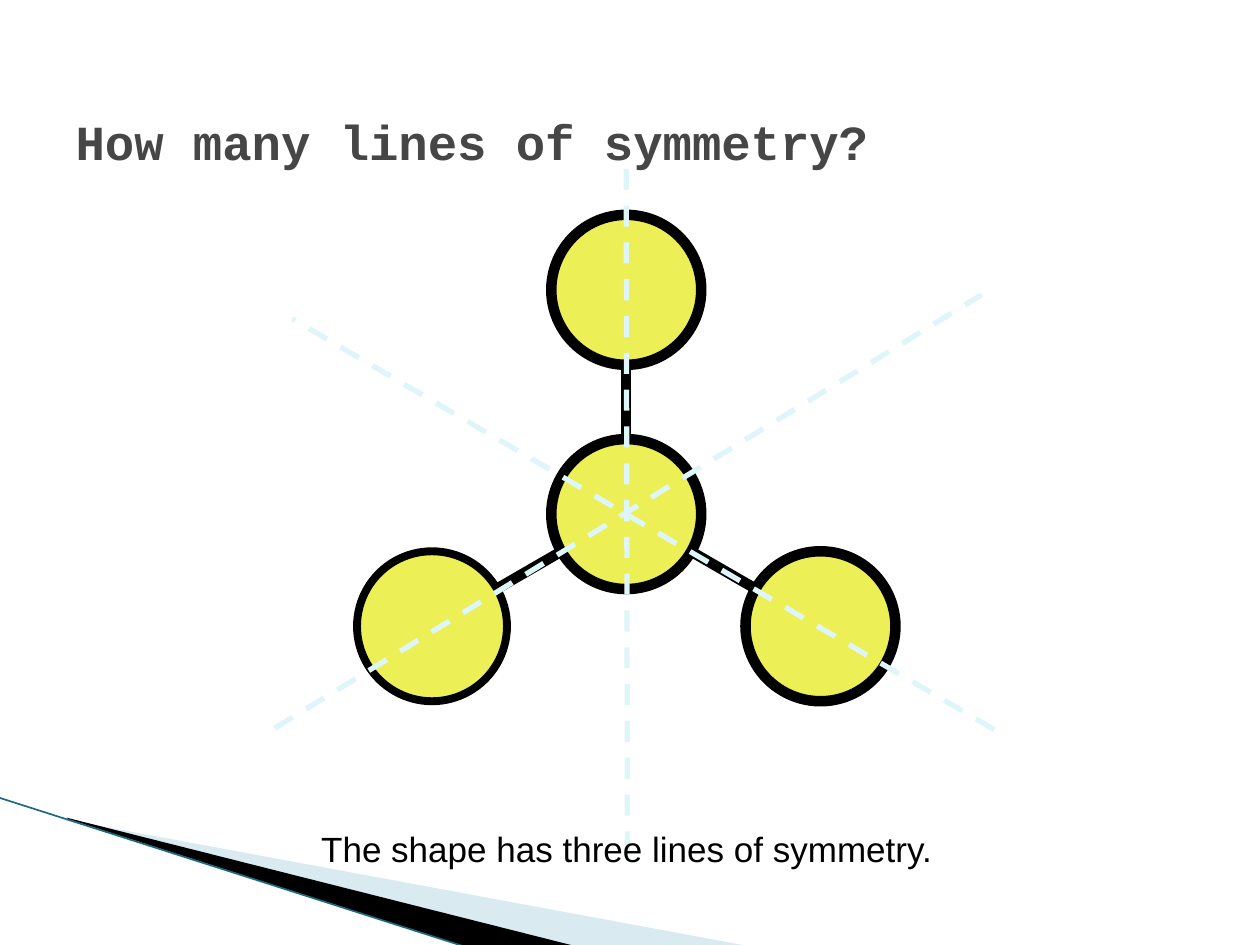
import math

from lxml import etree
from pptx import Presentation
from pptx.dml.color import RGBColor
from pptx.enum.dml import MSO_LINE
from pptx.enum.shapes import MSO_CONNECTOR, MSO_SHAPE
from pptx.enum.text import MSO_ANCHOR, PP_ALIGN
from pptx.oxml.ns import qn
from pptx.util import Inches, Pt

STRAIGHT = MSO_CONNECTOR.STRAIGHT
OVAL = MSO_SHAPE.OVAL
DASH = MSO_LINE.DASH
MIDDLE = MSO_ANCHOR.MIDDLE
LEFT, CENTER = PP_ALIGN.LEFT, PP_ALIGN.CENTER

COLORS = {
    "title": "464646",
    "black": "000000",
    "disc": "ECF056",
    "symmetry": "DEF5FA",
    "wedge": "A0CBDC",
    "edge": "1B6A7D",
}


def rgb(name):
    return RGBColor.from_string(COLORS[name])


class SlideBuilder:
    """Holds the style and the current slide."""

    def __init__(self, slide):
        self.slide = slide

    def add_text(self, frame, text, align, color, **font_values):
        para = frame.paragraphs[0]
        para.alignment = align
        span = para.add_run()
        span.text = text
        for name, value in font_values.items():
            setattr(span.font, name, value)
        span.font.color.rgb = rgb(color)

    def title(self, text, left, top, width, height):
        box = self.slide.shapes.title
        box.left, box.top = Inches(left), Inches(top)
        box.width, box.height = Inches(width), Inches(height)
        box.text_frame.vertical_anchor = MIDDLE
        self.add_text(box.text_frame, text, LEFT, "title",
                      name="Courier New", size=Pt(28), bold=True)

    def caption(self, text, left, top, width, height):
        box = self.slide.shapes.add_textbox(
            Inches(left), Inches(top), Inches(width), Inches(height))
        box.text_frame.word_wrap = False
        self.add_text(box.text_frame, text, CENTER, "black",
                      name="Arial", size=Pt(20))

    def line(self, start, end, color, weight, dash=None, parent=None):
        shapes = (parent or self.slide).shapes
        connector = shapes.add_connector(
            STRAIGHT, *(Inches(value) for value in (*start, *end)))
        connector.line.color.rgb = rgb(color)
        connector.line.width = Pt(weight)
        if dash is not None:
            connector.line.dash_style = dash
        properties = connector._element.spPr
        etree.SubElement(properties, qn("a:effectLst"))

    def disc(self, center, diameter, weight, parent):
        left, top = (value - diameter / 2 for value in center)
        shape = parent.shapes.add_shape(
            OVAL, Inches(left), Inches(top), Inches(diameter), Inches(diameter))
        shape.shadow.inherit = False
        shape.fill.solid()
        shape.fill.fore_color.rgb = rgb("disc")
        shape.line.color.rgb = rgb("black")
        shape.line.width = Pt(weight)

    def wedge(self, points, color, opacity=100):
        start, *rest = [(Inches(x), Inches(y)) for x, y in points]
        builder = self.slide.shapes.build_freeform(*start)
        builder.add_line_segments(rest, close=True)
        shape = builder.convert_to_shape()
        shape.shadow.inherit = False
        shape.fill.solid()
        shape.fill.fore_color.rgb = rgb(color)
        shape.line.fill.background()
        if opacity < 100:
            tint = shape._element.spPr.find(qn("a:solidFill"))[0]
            etree.SubElement(tint, qn("a:alpha"), val=str(opacity * 1000))


def main():
    deck = Presentation()
    deck.slide_width, deck.slide_height = Inches(10), Inches(7.5)
    page = SlideBuilder(deck.slides.add_slide(deck.slide_layouts[5]))

    # Corner decoration
    page.wedge([(0.55, 6.51), (5.95, 7.51), (4.56, 7.51), (0.55, 6.5)],
               "wedge", opacity=40)
    page.wedge([(0.53, 6.49), (4.57, 7.51), (3.72, 7.52), (0.54, 6.5)], "black")
    page.line((-0.01, 6.33), (3.71, 7.52), "edge", 0.95)

    page.title("How many lines of symmetry?", 0.5, 0.49, 9, 1.25)

    # Hub with three outer discs, 120 degrees apart
    hub, diameter, reach = (4.97, 4.08), 1.19, 1.78

    def spoke(angle, distance):
        turn = math.radians(angle)
        return (hub[0] + distance * math.cos(turn),
                hub[1] + distance * math.sin(turn))

    figure = page.slide.shapes.add_group_shape()
    for angle, weight in ((150, 4.5), (30, 6), (270, 6)):
        page.line(spoke(angle, diameter / 2), spoke(angle, reach - diameter / 2),
                  "black", 6, parent=figure)
        page.disc(spoke(angle, reach), diameter, weight, figure)
    page.disc(hub, diameter, 6, figure)

    # Lines of symmetry
    for start, end in (((4.97, 1.34), (4.98, 6.89)),
                       ((2.18, 5.78), (7.79, 2.34)),
                       ((7.89, 5.79), (2.32, 2.53))):
        page.line(start, end, "symmetry", 3, DASH)

    page.caption("The shape has three lines of symmetry.", 2.43, 6.52, 5.09, 0.44)
    deck.save("out.pptx")


if __name__ == "__main__":
    main()
